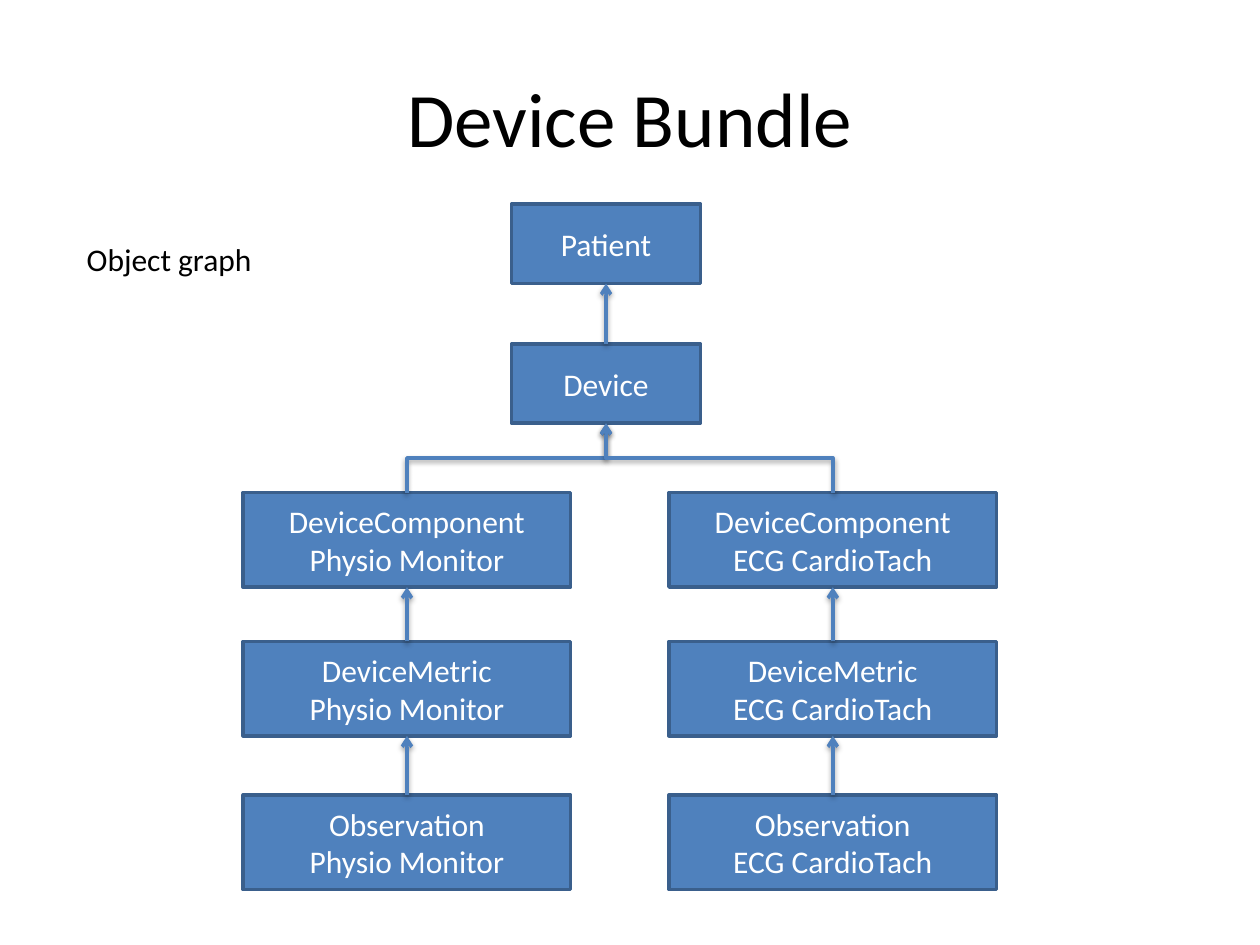
from dataclasses import dataclass

from lxml import etree
from pptx import Presentation
from pptx import util as u
from pptx.dml import color
from pptx.enum import shapes, text
from pptx.oxml import ns


@dataclass(frozen=True)
class Theme:
    font: str = "Calibri"
    fill: str = "4F81BD"
    border: str = "3A5F8C"
    light: str = "FFFFFF"
    dark: str = "000000"
    title_size: int = 44
    body_size: int = 18
    line_width: int = 2


@dataclass(frozen=True)
class Node:
    lines: tuple[str, ...]
    center: float
    top: float
    width: float
    height: float

    @property
    def bottom(self) -> float:
        return self.top + self.height


THEME = Theme()
ROOT_CENTER = 4.81
ROOT_SIZE = (1.5, 0.63)
BRANCH_SIZE = (2.6, 0.75)
ROOTS = (("Patient", 1.62), ("Device", 2.73))
BRANCHES = (("Physio Monitor", 3.23), ("ECG CardioTach", 6.61))
LEVELS = (("DeviceComponent", 3.91), ("DeviceMetric", 5.09), ("Observation", 6.31))


def write_lines(frame, lines: tuple[str, ...], size: int, ink: str, align) -> None:
    for index, line in enumerate(lines):
        para = frame.paragraphs[0] if index == 0 else frame.add_paragraph()
        para.alignment = align
        span = para.add_run()
        span.text = line
        span.font.name = THEME.font
        span.font.size = u.Pt(size)
        span.font.color.rgb = color.RGBColor.from_string(ink)


def draw_node(page, node: Node) -> None:
    box = page.shapes.add_shape(
        shapes.MSO_SHAPE.RECTANGLE,
        u.Inches(node.center - node.width / 2), u.Inches(node.top),
        u.Inches(node.width), u.Inches(node.height),
    )
    box.shadow.inherit = False
    box.fill.solid()
    box.fill.fore_color.rgb = color.RGBColor.from_string(THEME.fill)
    box.line.color.rgb = color.RGBColor.from_string(THEME.border)
    box.line.width = u.Pt(THEME.line_width)
    box.text_frame.vertical_anchor = text.MSO_ANCHOR.MIDDLE
    write_lines(box.text_frame, node.lines, THEME.body_size, THEME.light,
                text.PP_ALIGN.CENTER)


def style_arrow(arrow) -> None:
    arrow.line.color.rgb = color.RGBColor.from_string(THEME.fill)
    arrow.line.width = u.Pt(THEME.line_width)
    etree.SubElement(arrow.line._get_or_add_ln(), ns.qn("a:tailEnd"), type="arrow")
    effects = etree.SubElement(arrow._element.spPr, ns.qn("a:effectLst"))
    shadow = etree.SubElement(
        effects, ns.qn("a:outerShdw"), blurRad=str(u.Pt(3.1)),
        dist=str(u.Pt(1.6)), dir="5400000", rotWithShape="0",
    )
    tint = etree.SubElement(shadow, ns.qn("a:srgbClr"), val=THEME.dark)
    etree.SubElement(tint, ns.qn("a:alpha"), val="38000")


def draw_straight(page, child: Node, parent: Node) -> None:
    arrow = page.shapes.add_connector(
        shapes.MSO_CONNECTOR.STRAIGHT,
        u.Inches(child.center), u.Inches(child.top),
        u.Inches(parent.center), u.Inches(parent.bottom),
    )
    style_arrow(arrow)


def draw_elbow(page, child: Node, parent: Node) -> None:
    middle_x = (child.center + parent.center) / 2
    middle_y = (child.top + parent.bottom) / 2
    rise = (child.top - parent.bottom) / 2
    run = (parent.center - child.center) / 2
    arrow = page.shapes.add_connector(
        shapes.MSO_CONNECTOR.ELBOW,
        u.Inches(middle_x - rise), u.Inches(middle_y - run),
        u.Inches(middle_x + rise), u.Inches(middle_y + run),
    )
    arrow._element.spPr.find(ns.qn("a:xfrm")).set("rot", str(270 * 60000))
    style_arrow(arrow)


def draw_title(page) -> None:
    title = page.shapes.title
    title.left, title.top = u.Inches(0.5), u.Inches(0.3)
    title.width, title.height = u.Inches(9), u.Inches(1.25)
    title.text_frame.vertical_anchor = text.MSO_ANCHOR.MIDDLE
    write_lines(title.text_frame, ("Device Bundle",), THEME.title_size, THEME.dark,
                text.PP_ALIGN.CENTER)


def draw_label(page) -> None:
    label = page.shapes.add_textbox(
        u.Inches(0.59), u.Inches(1.86), u.Inches(1.53), u.Inches(0.4)
    )
    label.text_frame.word_wrap = False
    label.text_frame.auto_size = text.MSO_AUTO_SIZE.SHAPE_TO_FIT_TEXT
    write_lines(label.text_frame, ("Object graph",), THEME.body_size, THEME.dark,
                text.PP_ALIGN.LEFT)


def main() -> None:
    deck = Presentation()
    deck.slide_width, deck.slide_height = u.Inches(10), u.Inches(7.5)
    page = deck.slides.add_slide(deck.slide_layouts.get_by_name("Title Only"))
    draw_title(page)

    patient, device = (Node((name,), ROOT_CENTER, top, *ROOT_SIZE) for name, top in ROOTS)
    draw_node(page, patient)
    draw_node(page, device)
    draw_straight(page, device, patient)

    for source, center in BRANCHES:
        parent = device
        for kind, top in LEVELS:
            node = Node((kind, source), center, top, *BRANCH_SIZE)
            draw_node(page, node)
            connect = draw_elbow if parent is device else draw_straight
            connect(page, node, parent)
            parent = node

    draw_label(page)
    deck.save("out.pptx")


if __name__ == "__main__":
    main()
